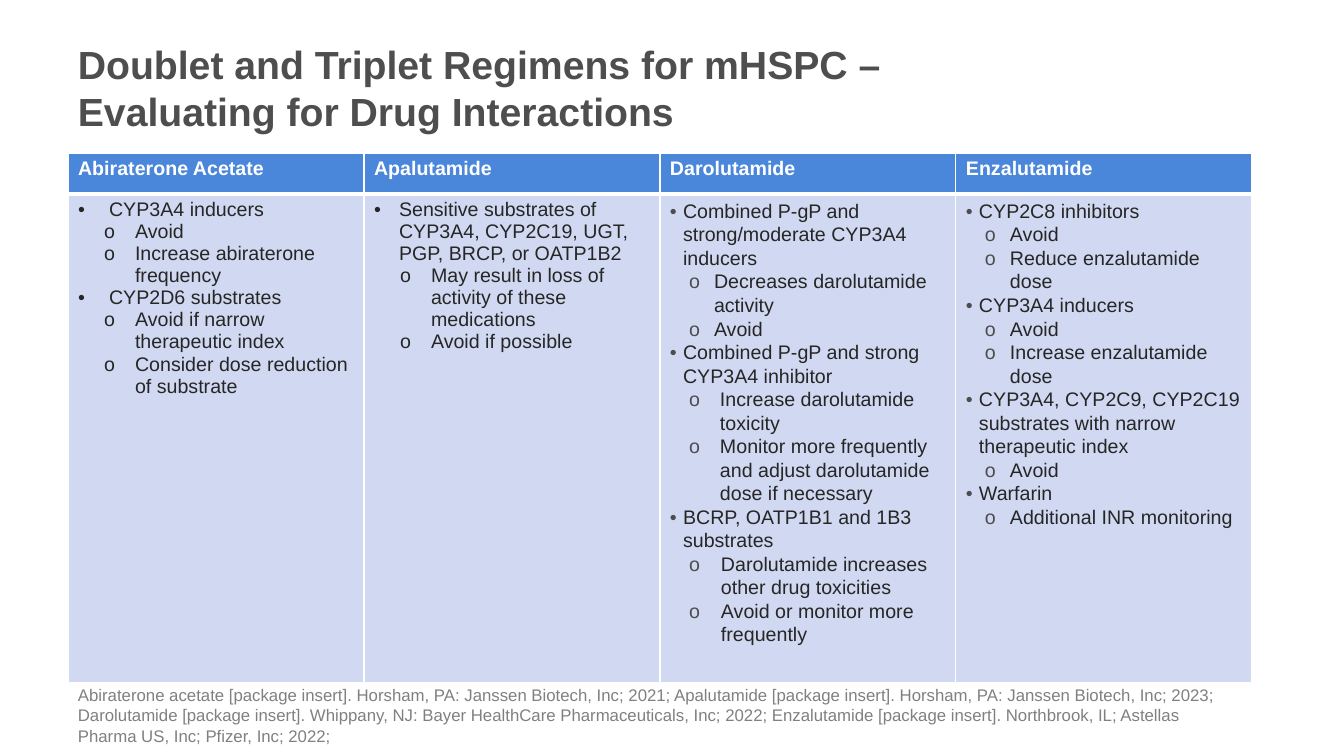
from lxml import etree
from pptx import Presentation
from pptx import util as u
from pptx.dml.color import RGBColor
from pptx.enum import text
from pptx.oxml.ns import qn

PX = 914400 / 100.8
FONT = "Arial"
COLORS = {
    "title": "4D4E4D",
    "header": "4A86D9",
    "body": "D0D9F1",
    "ink": "262626",
    "marker": "4D4D4D",
    "white": "FFFFFF",
    "source": "808080",
}

TITLE = "Doublet and Triplet Regimens for mHSPC – \vEvaluating for Drug Interactions"

# Each drug: name, topic indent, marker colour, line spacing, groups.
# Each group: topic, (left, hanging) of its advice, advice.
DRUGS = [
    ("Abiraterone Acetate", 31, "ink", 1.0, [
        ("CYP3A4 inducers", (57, 31), ["Avoid", "Increase abiraterone frequency"]),
        ("CYP2D6 substrates", (57, 31), [
            "Avoid if narrow therapeutic index",
            "Consider dose reduction of substrate"]),
    ]),
    ("Apalutamide", 25, "ink", 1.0, [
        ("Sensitive substrates of CYP3A4, CYP2C19, UGT, PGP, BRCP, or OATP1B2", (57, 31), [
            "May result in loss of activity of these medications",
            "Avoid if possible"]),
    ]),
    ("Darolutamide", 13, "marker", 1.07, [
        ("Combined P-gP and strong/moderate CYP3A4 inducers", (44, 25), [
            "Decreases darolutamide activity", "Avoid"]),
        ("Combined P-gP and strong CYP3A4 inhibitor", (50, 31), [
            "Increase darolutamide toxicity",
            "Monitor more frequently and adjust darolutamide dose if necessary"]),
        ("BCRP, OATP1B1 and 1B3 substrates", (51, 32), [
            "Darolutamide increases other drug toxicities",
            "Avoid or monitor more frequently"]),
    ]),
    ("Enzalutamide", 13, "marker", 1.07, [
        ("CYP2C8 inhibitors", (44, 25), ["Avoid", "Reduce enzalutamide dose"]),
        ("CYP3A4 inducers", (44, 25), ["Avoid", "Increase enzalutamide dose"]),
        ("CYP3A4, CYP2C9, CYP2C19 substrates with narrow therapeutic index", (44, 25),
         ["Avoid"]),
        ("Warfarin", (44, 25), ["Additional INR monitoring"]),
    ]),
]

SOURCES = [
    "Abiraterone acetate [package insert]. Horsham, PA: Janssen Biotech, Inc; 2021; "
    "Apalutamide [package insert]. Horsham, PA: Janssen Biotech, Inc; 2023;",
    "Darolutamide [package insert]. Whippany, NJ: Bayer HealthCare Pharmaceuticals, Inc; 2022; "
    "Enzalutamide [package insert]. Northbrook, IL; Astellas Pharma US, Inc; Pfizer, Inc; 2022;",
]


def px(length):
    return u.Emu(round(length * PX))


def rgb(name):
    return RGBColor.from_string(COLORS[name])


def write(frame, words, size=14, color="ink", bold=False, spacing=1.0, bullet=None):
    """Add a paragraph; bullet is (character, left, hanging, colour)."""
    line = frame.paragraphs[0]
    if line.runs:
        line = frame.add_paragraph()
    line.text = words
    line.line_spacing = spacing
    if bullet:
        add_bullet(line, *bullet)
    for run in line.runs:
        run.font.name, run.font.size, run.font.bold = FONT, u.Pt(size), bold
        run.font.color.rgb = rgb(color)


def add_bullet(line, character, left, hanging, color):
    props = line._p.get_or_add_pPr()
    props.set("marL", str(px(left)))
    props.set("indent", str(-px(hanging)))
    tint = etree.SubElement(props, qn("a:buClr"))
    etree.SubElement(tint, qn("a:srgbClr"), val=COLORS[color])
    etree.SubElement(props, qn("a:buFont"), typeface=FONT)
    etree.SubElement(props, qn("a:buChar"), char=character)


def style_cell(cell, fill, top=1, bottom=1):
    """Fill a cell and draw white borders, with widths in points."""
    props = cell._tc.get_or_add_tcPr()
    for side, width in (("L", 1), ("R", 1), ("T", top), ("B", bottom)):
        border = etree.SubElement(props, qn(f"a:ln{side}"), w=str(u.Pt(width)))
        paint = etree.SubElement(border, qn("a:solidFill"))
        etree.SubElement(paint, qn("a:srgbClr"), val=COLORS["white"])
    cell.fill.solid()
    cell.fill.fore_color.rgb = rgb(fill)


def add_frame(slide, box, anchor=text.MSO_ANCHOR.TOP):
    frame = slide.shapes.add_textbox(*map(px, box)).text_frame
    frame.word_wrap = True
    frame.vertical_anchor = anchor
    return frame


def add_title(slide, box):
    write(add_frame(slide, box, text.MSO_ANCHOR.MIDDLE), TITLE, 28, "title", bold=True)


def add_drug_table(slide, box, header_height=41):
    left, top, width, height = box
    table = slide.shapes.add_table(2, len(DRUGS), *map(px, box)).table
    table.rows[0].height = px(header_height)
    table.rows[1].height = px(height - header_height)
    for index, (drug, indent, marker, spacing, groups) in enumerate(DRUGS):
        table.columns[index].width = px(width / len(DRUGS))
        header, advice_cell = table.cell(0, index), table.cell(1, index)
        style_cell(header, "header", bottom=3)
        write(header.text_frame, drug, color="white", bold=True)
        style_cell(advice_cell, "body", top=3)
        frame = advice_cell.text_frame
        for topic, (sub_left, hanging), advice in groups:
            write(frame, topic, spacing=spacing, bullet=("•", indent, indent, marker))
            for item in advice:
                write(frame, item, spacing=spacing, bullet=("o", sub_left, hanging, marker))


def add_sources(slide, box):
    frame = add_frame(slide, box)
    for source in SOURCES:
        write(frame, source, 12, "source")


def main():
    deck = Presentation()
    deck.slide_width, deck.slide_height = px(1344), px(756)
    slide = deck.slides.add_slide(deck.slide_layouts[6])
    add_title(slide, (68, 22, 1184, 131))
    add_drug_table(slide, (68, 153, 1184, 497))
    add_sources(slide, (68, 680, 1159, 72))
    deck.save("out.pptx")


if __name__ == "__main__":
    main()
